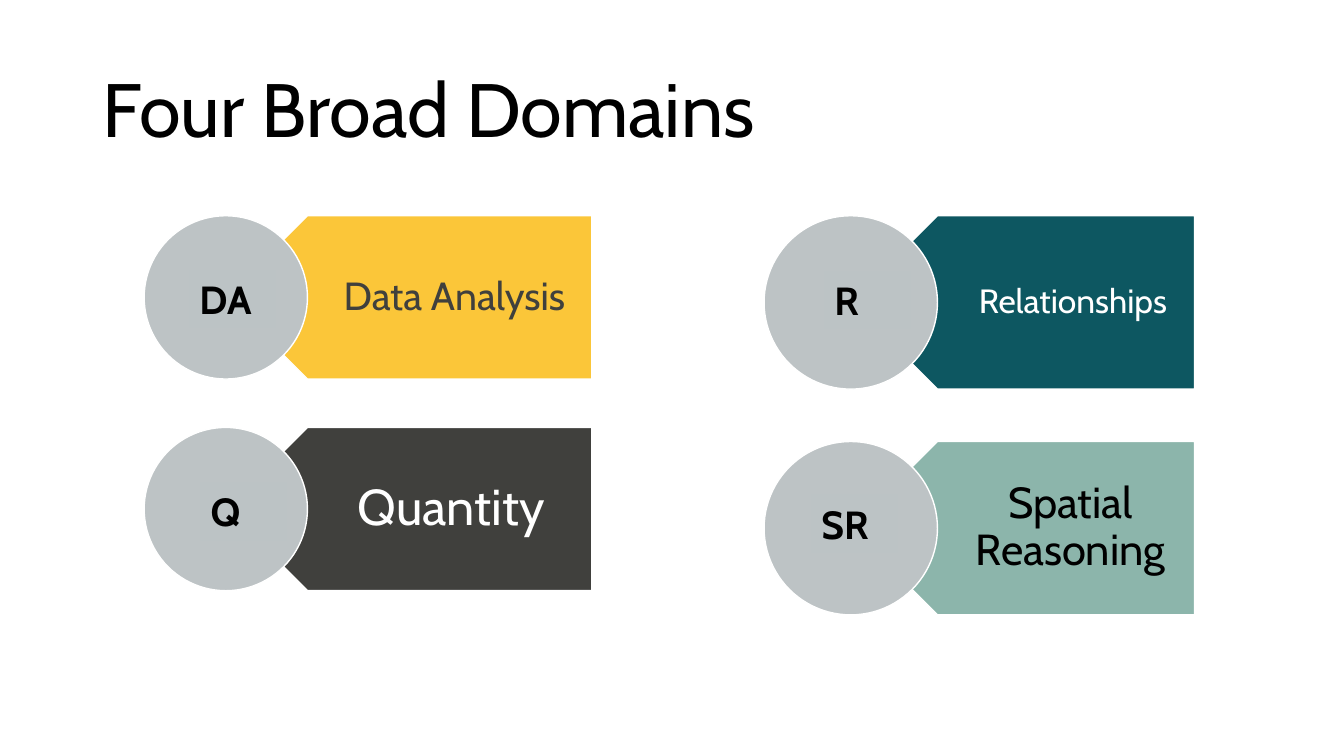
"""Build a slide that shows four broad domains as labelled plates in two columns."""
from dataclasses import dataclass

from pptx import Presentation
from pptx.dml.color import RGBColor
from pptx.enum.shapes import MSO_SHAPE
from pptx.enum.text import MSO_ANCHOR, PP_ALIGN
from pptx.shapes.autoshape import Shape
from pptx.slide import Slide
from pptx.util import Inches, Length, Pt

PLATE, CIRCLE, PATCH = MSO_SHAPE.PENTAGON, MSO_SHAPE.OVAL, MSO_SHAPE.RECTANGLE
MIDDLE, TOP = MSO_ANCHOR.MIDDLE, MSO_ANCHOR.TOP
LEFT, CENTER = PP_ALIGN.LEFT, PP_ALIGN.CENTER

FONT = "Cabin"
COLUMNS, ROWS = 133.33, 75
CELL = Inches(0.1)
COLORS = {
    "white": "FFFFFF",
    "black": "000000",
    "charcoal": "40403D",
    "yellow": "FBC639",
    "teal": "0D5761",
    "sage": "8CB5AB",
    "circle": "BDC3C5",
    "patch": "BCC3C5",
}


@dataclass(frozen=True)
class Stack:
    """Column of domains; lengths are in grid cells."""
    left: float
    diameter: float
    pitch: float
    plate_width: float
    inset: float


@dataclass(frozen=True)
class Domain:
    """One domain; abbreviation offsets are in grid cells from its circle."""
    name: str
    abbreviation: str
    stack: Stack
    row: int
    fill: str
    ink: str
    size: int
    margin_right: float
    offset: tuple[float, float]


STACK_TOP = 21.4
FIRST = Stack(14.3, 16.2, 21, 36.3, 7.2)
SECOND = Stack(75.8, 17.2, 22.4, 34.1, 7.6)
DOMAINS = [
    Domain("Data Analysis", "DA", FIRST, 0, "yellow", "charcoal", 28, 2.2, (4.5, 5.4)),
    Domain("Quantity", "Q", FIRST, 1, "charcoal", "white", 36, 2.8, (5.6, 5.5)),
    Domain("Relationships", "R", SECOND, 0, "teal", "white", 24, 1.9, (6, 5.5)),
    Domain("Spatial Reasoning", "SR", SECOND, 1, "sage", "black", 31, 2.4, (4.7, 5.3)),
]


def cells(count: float) -> Length:
    """Convert grid cells to a length."""
    return Length(round(count * CELL))


def rgb(name: str) -> RGBColor:
    """Look up a named colour."""
    return RGBColor.from_string(COLORS[name])


def write(shape: Shape, words: str, size: int, ink: str, align: PP_ALIGN,
          anchor: MSO_ANCHOR, spacing: float = 1, bold: bool = False) -> None:
    """Set and format the single paragraph of a shape."""
    frame = shape.text_frame
    frame.word_wrap = True
    frame.vertical_anchor = anchor
    paragraph = frame.paragraphs[0]
    paragraph.text = words
    paragraph.alignment = align
    paragraph.line_spacing = spacing
    paragraph.font.name = FONT
    paragraph.font.size = Pt(size)
    paragraph.font.bold = bold
    paragraph.font.color.rgb = rgb(ink)


def add_block(slide: Slide, kind: MSO_SHAPE, left: float, top: float, width: float,
              height: float, fill: str, outlined: bool = True) -> Shape:
    """Add a filled shape placed in grid cells."""
    block = slide.shapes.add_shape(kind, cells(left), cells(top), cells(width), cells(height))
    block.shadow.inherit = False
    block.fill.solid()
    block.fill.fore_color.rgb = rgb(fill)
    if outlined:
        block.line.color.rgb = rgb("white")
        block.line.width = Pt(1)
    else:
        block.line.fill.background()
    return block


def add_domain(slide: Slide, domain: Domain) -> None:
    """Draw a domain's plate, name, circle and abbreviation."""
    stack = domain.stack
    size = stack.diameter
    top = STACK_TOP + domain.row * stack.pitch
    plate_left = stack.left + size / 2
    plate = add_block(slide, PLATE, plate_left, top, stack.plate_width, size, domain.fill)
    plate.rotation = 180

    name = slide.shapes.add_textbox(cells(plate_left + size / 4), cells(top),
                                    cells(stack.plate_width - size / 4), cells(size))
    write(name, domain.name, domain.size, domain.ink, CENTER, MIDDLE, 0.9)
    name.text_frame.margin_left = cells(stack.inset)
    name.text_frame.margin_right = cells(domain.margin_right)

    add_block(slide, CIRCLE, stack.left, top, size, size, "circle")
    across, down = domain.offset
    patch = add_block(slide, PATCH, stack.left + across, top + down, 8.5, 5.7, "patch", False)
    write(patch, domain.abbreviation, 28, "black", LEFT, TOP, bold=True)


def main() -> None:
    """Create and save the presentation."""
    deck = Presentation()
    deck.slide_width, deck.slide_height = cells(COLUMNS), cells(ROWS)
    slide = deck.slides.add_slide(deck.slide_layouts[5])
    title = slide.shapes.title
    title.left, title.top = cells(9.2), cells(4)
    title.width, title.height = cells(115), cells(14.5)
    write(title, "Four Broad Domains", 54, "black", LEFT, MIDDLE, 0.9)
    for domain in DOMAINS:
        add_domain(slide, domain)
    deck.save("out.pptx")


if __name__ == "__main__":
    main()
